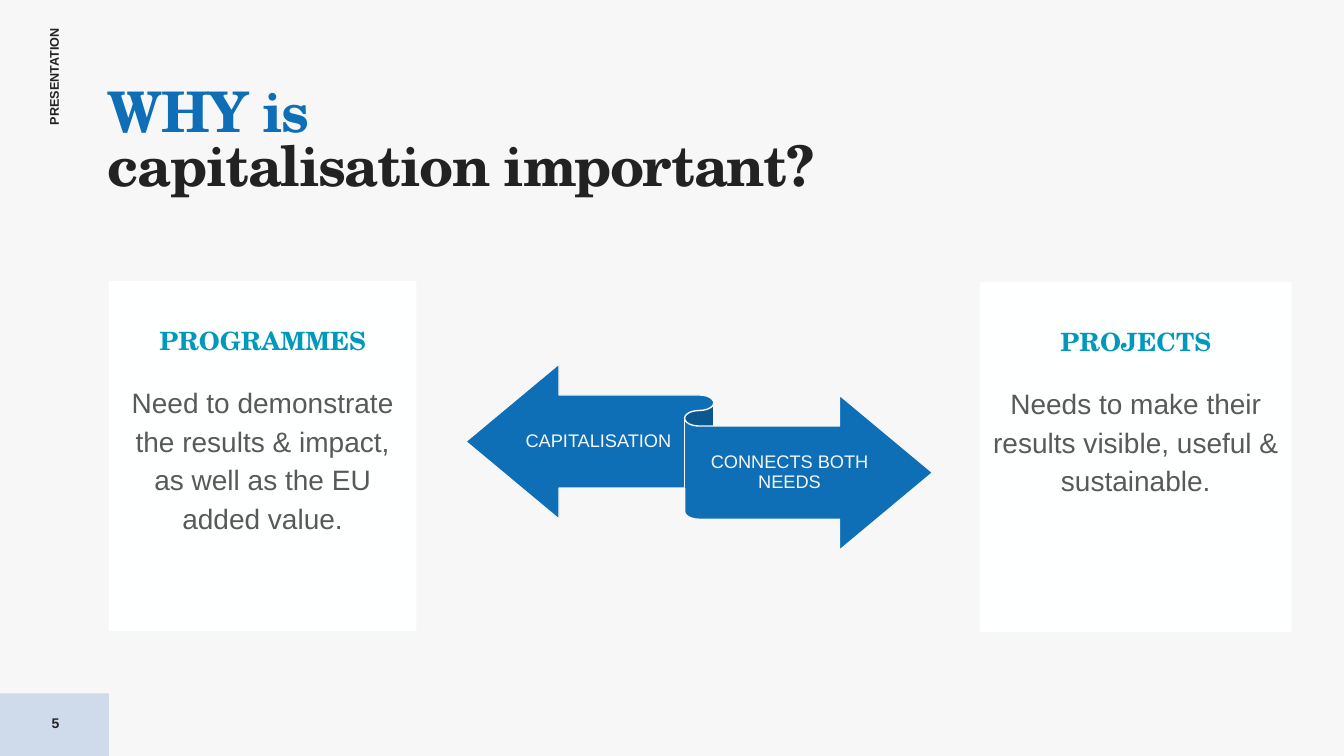
from pptx import Presentation
from pptx.dml.color import RGBColor
from pptx.enum.shapes import MSO_SHAPE as SHAPE
from pptx.enum.text import MSO_ANCHOR as ANCHOR, MSO_AUTO_SIZE as AUTO_SIZE, PP_ALIGN as ALIGN
from pptx.util import Pt

PX = 9144  # 100 px to the inch
SANS, SERIF = "Arial", "TeX Gyre Schola"
COLOURS = {
    "background": "F7F7F7", "corner": "CFDBEA", "card": "FEFFFF",
    "ink": "222222", "blue": "0E6EB6", "teal": "0099BC", "grey": "595959",
}


def colour(name):
    return RGBColor.from_string(COLOURS[name])


def write(frame, paragraphs, insets=(0, 0, 0, 0), anchor=ANCHOR.TOP, wrap=True, **layout):
    """Fill a text frame; each paragraph is a list of (text, size, font, colour, bold)."""
    sides = ("margin_left", "margin_top", "margin_right", "margin_bottom")
    settings = dict(zip(sides, (inset * PX for inset in insets)),
                    vertical_anchor=anchor, word_wrap=wrap, auto_size=AUTO_SIZE.NONE)
    for key, value in settings.items():
        setattr(frame, key, value)
    for index, pieces in enumerate(paragraphs):
        paragraph = frame.add_paragraph() if index else frame.paragraphs[0]
        for key, value in layout.items():
            if index or key != "space_before":
                setattr(paragraph, key, value)
        for number, (text, size, font, ink, bold) in enumerate(pieces):
            if number:
                paragraph.add_line_break()
            run = paragraph.add_run()
            run.text = text
            for key, value in {"size": Pt(size), "name": font, "bold": bold}.items():
                setattr(run.font, key, value)
            run.font.color.rgb = colour(ink)


deck = Presentation()
deck.slide_width, deck.slide_height = 1333 * PX, 750 * PX
slide = deck.slides.add_slide(deck.slide_layouts[5])
slide.background.fill.solid()
slide.background.fill.fore_color.rgb = colour("background")

# Title
title = slide.shapes.title
for side, length in {"left": 107, "top": 89, "width": 787, "height": 160}.items():
    setattr(title, side, length * PX)
write(title.text_frame,
      [[("WHY is", 40, SERIF, "blue", True),
        ("capitalisation important?", 40, SERIF, "ink", True)]],
      alignment=ALIGN.LEFT, line_spacing=0.8)
for run in title.text_frame.paragraphs[0].runs:
    run.font._element.set("spc", "-100")

# Panels and the two-way ribbon
panels = {}
for name, preset, fill, box in (
    ("corner", SHAPE.RECTANGLE, "corner", (0, 688, 108, 62)),
    ("programmes", SHAPE.RECTANGLE, "card", (108, 279, 305, 347)),
    ("projects", SHAPE.RECTANGLE, "card", (972, 280, 309, 347)),
    ("ribbon", SHAPE.LEFT_RIGHT_RIBBON, "blue", (462, 361, 463, 185)),
):
    panel = panels[name] = slide.shapes.add_shape(preset, *(n * PX for n in box))
    panel.shadow.inherit = False
    panel.fill.solid()
    panel.fill.fore_color.rgb = colour(fill)
    panel.line.fill.background()
ribbon_edge = panels["ribbon"].line
ribbon_edge.color.rgb = colour("background")
ribbon_edge.width = Pt(1)

# Card texts
for name, need in (
    ("programmes", "Need to demonstrate the results & impact, as well as the EU added value."),
    ("projects", "Needs to make their results visible, useful & sustainable."),
):
    write(panels[name].text_frame,
          [[(name.upper(), 18, SERIF, "teal", True)], [(need, 20, SANS, "grey", False)]],
          insets=(12, 39, 12, 20), alignment=ALIGN.CENTER,
          line_spacing=1.15, space_before=Pt(18))

# Ribbon labels
for label, box in (
    ("CAPITALISATION", (517, 393, 153, 91)),
    ("CONNECTS BOTH NEEDS", (693, 423, 180, 91)),
):
    ribbon_label = slide.shapes.add_textbox(*(n * PX for n in box))
    write(ribbon_label.text_frame, [[(label, 13, SANS, "background", False)]],
          insets=(0, 5, 0, 5), anchor=ANCHOR.MIDDLE,
          alignment=ALIGN.CENTER, line_spacing=0.9)

# Side label and page number
side_label = slide.shapes.add_textbox(4 * PX, 67 * PX, 99 * PX, 15 * PX)
side_label.rotation = 270
write(side_label.text_frame, [[("PRESENTATION", 9, SANS, "ink", True)]], wrap=False)

page_number = slide.shapes.add_textbox(0, 697 * PX, 110 * PX, 40 * PX)
write(page_number.text_frame, [[("5", 10, SANS, "ink", True)]],
      anchor=ANCHOR.MIDDLE, alignment=ALIGN.CENTER)

deck.save("out.pptx")
